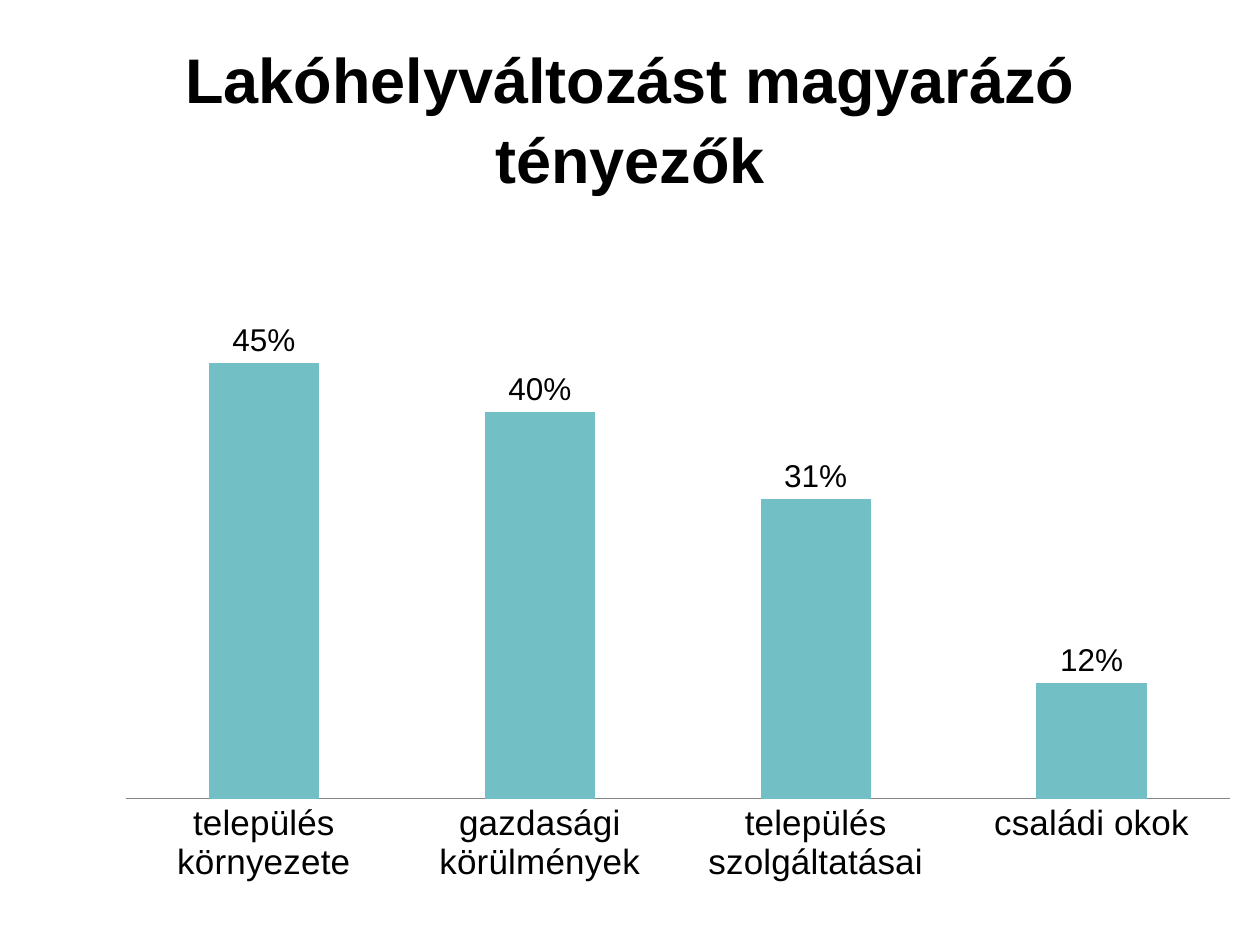
import pptx
import pptx.chart.data
import pptx.dml.color
import pptx.enum.chart
import pptx.enum.text
import pptx.util
from lxml import etree
from pptx.util import Inches

BLACK = pptx.dml.color.RGBColor(0x00, 0x00, 0x00)
TEAL = pptx.dml.color.RGBColor(0x72, 0xBF, 0xC5)
GRAY = pptx.dml.color.RGBColor(0x86, 0x86, 0x86)
FONT = "Arial"


def add_text(slide, text, left, top, width, height, size, bold=False, color=BLACK):
    sp = slide.shapes.add_textbox(Inches(left), Inches(top), Inches(width), Inches(height))
    tf = sp.text_frame
    tf.word_wrap = True
    tf.vertical_anchor = pptx.enum.text.MSO_ANCHOR.MIDDLE
    p = tf.paragraphs[0]
    p.alignment = pptx.enum.text.PP_ALIGN.CENTER
    p.line_spacing = 1.05
    r = p.add_run()
    r.text = text
    r.font.name = FONT
    r.font.size = pptx.util.Pt(size)
    r.font.bold = bold
    r.font.color.rgb = color


prs = pptx.Presentation()
prs.slide_width, prs.slide_height = Inches(10), Inches(7.5)
s = prs.slides.add_slide(prs.slide_layouts[6])

# Title
add_text(s, "Lakóhelyváltozást magyarázó tényezők", left=0.5, top=0.3,
         width=9, height=1.25, size=36, bold=True)

# Column chart
data = pptx.chart.data.CategoryChartData(number_format="0%")
data.categories = ["település környezete", "gazdasági körülmények",
                   "település szolgáltatásai", "családi okok"]
data.add_series("Series 1", (0.45, 0.4, 0.31, 0.12))
chart = s.shapes.add_chart(pptx.enum.chart.XL_CHART_TYPE.COLUMN_CLUSTERED,
                           Inches(0.75), Inches(2.49), Inches(9.25), Inches(4.8), data).chart
chart.has_legend = False
chart.has_title = False
chart.font.name = FONT
chart.font.size = pptx.util.Pt(18)
chart.font.color.rgb = BLACK

# Columns and their labels
plot = chart.plots[0]
plot.gap_width = 150
plot.vary_by_categories = False
fill = plot.series[0].format.fill
fill.solid()
fill.fore_color.rgb = TEAL
plot.has_data_labels = True
labels = plot.data_labels
labels.show_value = True
labels.number_format = "0%"
labels.number_format_is_linked = False
labels.position = pptx.enum.chart.XL_LABEL_POSITION.OUTSIDE_END

# Axes
cat_axis = chart.category_axis
cat_axis.major_tick_mark = pptx.enum.chart.XL_TICK_MARK.NONE
cat_axis.tick_labels.font.size = pptx.util.Pt(20)
cat_axis.format.line.color.rgb = GRAY
cat_axis.format.line.width = pptx.util.Pt(0.75)
val_axis = chart.value_axis
val_axis.minimum_scale, val_axis.maximum_scale = 0, 0.5
val_axis.has_major_gridlines = False
val_axis.visible = False

# Inner plot area, as fractions of the chart
plot_area = chart._chartSpace.chart.plotArea
ns = plot_area.nsmap["c"]
for old in plot_area.findall(f"{{{ns}}}layout"):
    plot_area.remove(old)
layout = etree.Element(f"{{{ns}}}layout")
manual = etree.SubElement(layout, f"{{{ns}}}manualLayout")
for tag, val in (("layoutTarget", "inner"), ("xMode", "edge"), ("yMode", "edge"),
                 ("x", "0.027"), ("y", "0.002"), ("w", "0.947"), ("h", "0.8")):
    etree.SubElement(manual, f"{{{ns}}}{tag}").set("val", val)
plot_area.insert(0, layout)

prs.save("out.pptx")
